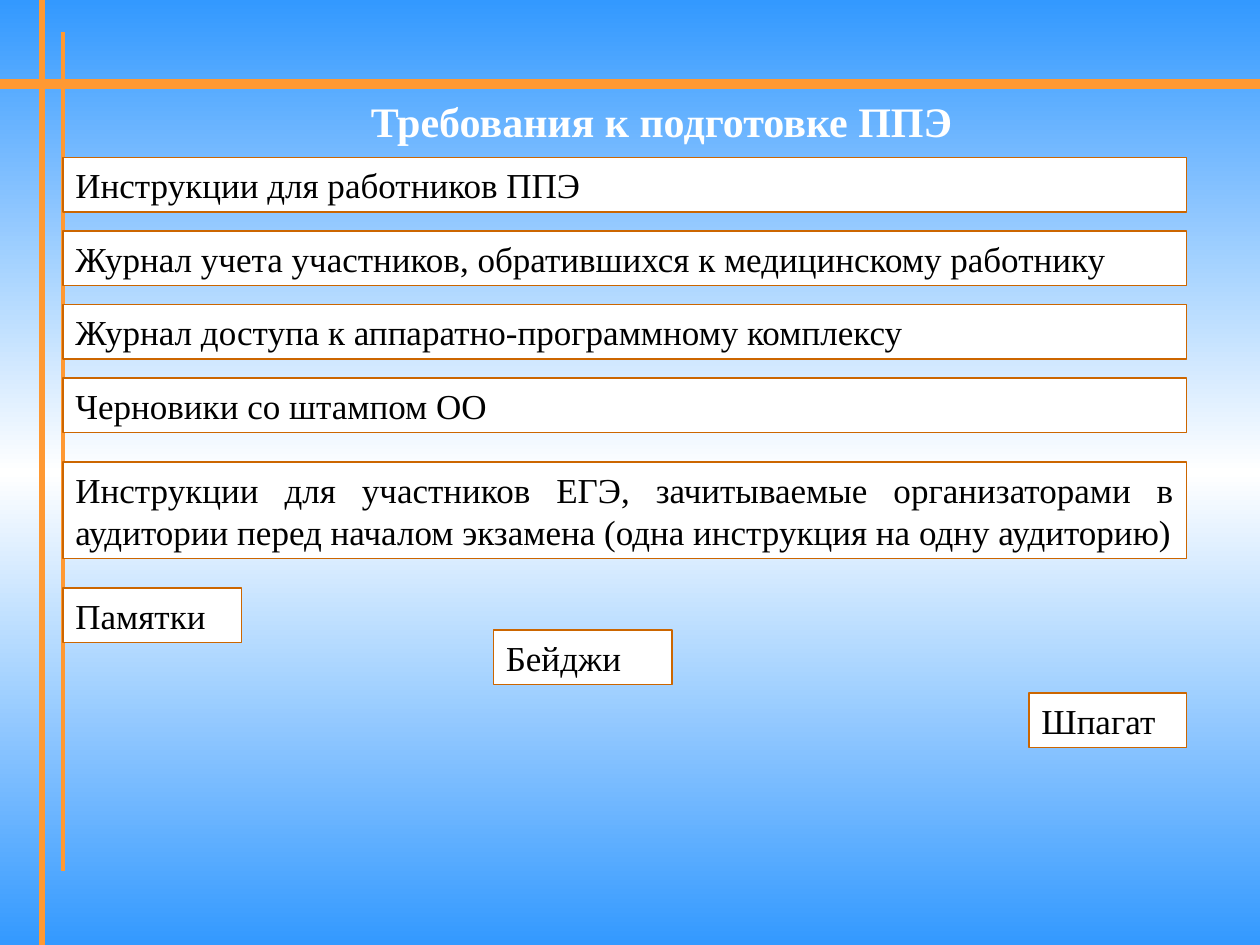
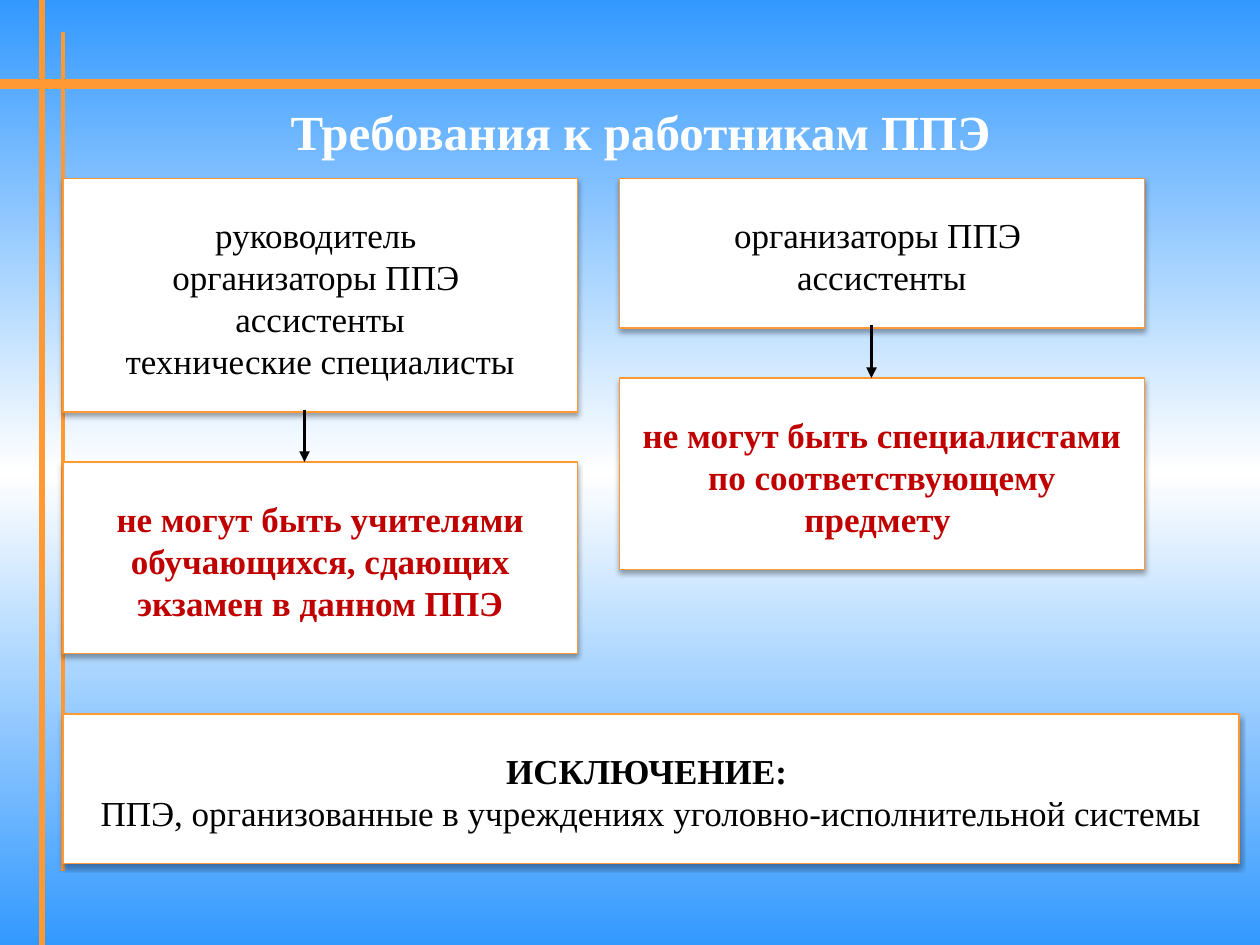
"""Builds two slides on the requirements for exam sites and their staff."""
import pptx
import pptx.util
import pptx.dml.color
import pptx.enum.shapes
import pptx.enum.text
import pptx.oxml
import pptx.oxml.ns
import lxml.etree

FONT = "Times New Roman"
BLUE, WHITE, BLACK = "3399FF", "FFFFFF", "000000"
GOLD, BROWN, RED = "FF9933", "CC6600", "C00000"
COLS, ROWS = 120, 90
LINE = 4
SLIM = (0.1, 0.05, 0.1, 0.05)
ROOMY = (0.1, 0.28, 0.1, 0.24)
ALIGN = pptx.enum.text.PP_ALIGN


def paint(code):
    return pptx.dml.color.RGBColor.from_string(code)


def node(parent, tag, **attrs):
    return lxml.etree.SubElement(parent, pptx.oxml.ns.qn(tag), **attrs)


class Deck:
    """Holds the style, the grid and the current slide."""

    def __init__(self):
        self.prs = pptx.Presentation()
        self.prs.slide_width = pptx.util.Inches(10)
        self.prs.slide_height = pptx.util.Inches(7.5)
        self.unit = self.prs.slide_width / COLS
        self.slide = None
        self.backdrop()

    def backdrop(self):
        master = self.prs.slide_master
        fill = master.background.fill
        fill.gradient()
        fill.gradient_angle = 270
        stops = next(master.element.iter(pptx.oxml.ns.qn("a:gsLst")))
        for stop in list(stops):
            stops.remove(stop)
        for pos, code in ((0, BLUE), (50, WHITE), (100, BLUE)):
            stop = node(stops, "a:gs", pos=str(pos * 1000))
            node(stop, "a:srgbClr", val=code)

    def grid(self, *cells):
        return [round(cell * self.unit) for cell in cells]

    def page(self, title, size, *area):
        self.slide = self.prs.slides.add_slide(self.prs.slide_layouts[6])
        self.rule(0, 8, COLS, 8, GOLD, 6)
        self.rule(4, 0, 4, ROWS, GOLD, 3)
        self.rule(6, 3, 6, 83, GOLD, 2.25)
        label = self.slide.shapes.add_textbox(*self.grid(*area))
        frame = label.text_frame
        frame.vertical_anchor = pptx.enum.text.MSO_ANCHOR.MIDDLE
        self.letter(frame, [(title, WHITE, True)], size, ALIGN.CENTER, SLIM)

    def rule(self, left, top, right, end, code, width, arrow=False):
        kind = pptx.enum.shapes.MSO_CONNECTOR.STRAIGHT
        ends = self.grid(left, top, right, end)
        rule = self.slide.shapes.add_connector(kind, *ends)
        rule.line.color.rgb = paint(code)
        rule.line.width = pptx.util.Pt(width)
        props = rule._element.spPr
        if arrow:
            line = props.find(pptx.oxml.ns.qn("a:ln"))
            node(line, "a:tailEnd", type="triangle")
        node(props, "a:effectLst")

    def arrow(self, col, top, end):
        self.rule(col, top, col, end, BLACK, 2, True)

    def letter(self, frame, texts, size, align, pads):
        frame.word_wrap = True
        (frame.margin_left, frame.margin_top,
         frame.margin_right, frame.margin_bottom) = map(pptx.util.Inches, pads)
        for count, (text, code, bold) in enumerate(texts):
            para = frame.add_paragraph() if count else frame.paragraphs[0]
            para.alignment = align
            run = para.add_run()
            run.text = text
            run.font.name = FONT
            run.font.size = pptx.util.Pt(size)
            run.font.bold = bold
            run.font.color.rgb = paint(code)

    def box(self, left, top, wide, lines, texts, edge, align, pads):
        high = lines * LINE + (pads[1] + pads[3]) * 12
        kind = pptx.enum.shapes.MSO_SHAPE.RECTANGLE
        box = self.slide.shapes.add_shape(
            kind, *self.grid(left, top, wide, high))
        box.shadow.inherit = False
        box.fill.solid()
        box.fill.fore_color.rgb = paint(WHITE)
        box.line.color.rgb = paint(edge)
        box.line.width = pptx.util.Pt(0.75)
        frame = box.text_frame
        frame.vertical_anchor = pptx.enum.text.MSO_ANCHOR.TOP
        frame.auto_size = pptx.enum.text.MSO_AUTO_SIZE.SHAPE_TO_FIT_TEXT
        self.letter(frame, texts, 20, align, pads)
        return box

    def item(self, left, top, wide, text, lines=1):
        self.box(left, top, wide, lines, [(text, BLACK, False)],
                 BROWN, ALIGN.JUSTIFY, SLIM)

    def card(self, left, top, wide, lines, *texts):
        card = self.box(left, top, wide, lines, texts,
                        GOLD, ALIGN.CENTER, ROOMY)
        effects = card._element.spPr.find(pptx.oxml.ns.qn("a:effectLst"))
        shade = node(effects, "a:outerShdw",
                     blurRad=str(pptx.util.Pt(3.1)),
                     dist=str(pptx.util.Pt(1.8)),
                     dir="5400000", rotWithShape="0")
        tint = node(shade, "a:srgbClr", val=BLACK)
        node(tint, "a:alpha", val="35000")


def needs(deck):
    deck.page("Требования к подготовке ППЭ", 24, 8, 10, 110, 3)
    papers = (
        "Инструкции для работников ППЭ",
        "Журнал учета участников, обратившихся к медицинскому работнику",
        "Журнал доступа к аппаратно-программному комплексу",
        "Черновики со штампом ОО",
    )
    for count, text in enumerate(papers):
        deck.item(6, 15 + 7 * count, 107, text)
    deck.item(6, 44, 107, "Инструкции для участников ЕГЭ, зачитываемые "
              "организаторами в аудитории перед началом экзамена "
              "(одна инструкция на одну аудиторию)", 2)
    deck.item(6, 56, 17, "Памятки")
    deck.item(47, 60, 17, "Бейджи")
    deck.item(98, 66, 15, "Шпагат")


def staff(deck):
    deck.page("Требования к работникам ППЭ", 28, 5, 8, 112, 9)
    helpers = (("организаторы ППЭ ", BLACK, False),
               ("ассистенты", BLACK, False))
    deck.card(6, 17, 49, 4, ("руководитель ", BLACK, False), *helpers,
              ("технические специалисты", BLACK, False))
    deck.card(6, 44, 49, 3, ("не могут быть учителями обучающихся, "
                             "сдающих экзамен в данном ППЭ", RED, True))
    deck.card(59, 17, 50, 2, *helpers)
    deck.card(59, 36, 50, 3, ("не могут быть специалистами по "
                              "соответствующему предмету ", RED, True))
    deck.card(6, 68, 112, 2, ("ИСКЛЮЧЕНИЕ: ", BLACK, True),
              ("ППЭ, организованные в учреждениях "
               "уголовно-исполнительной системы", BLACK, False))
    deck.arrow(29, 39, 44)
    deck.arrow(83, 31, 36)


def main():
    deck = Deck()
    needs(deck)
    staff(deck)
    deck.prs.save("out.pptx")


if __name__ == "__main__":
    main()
